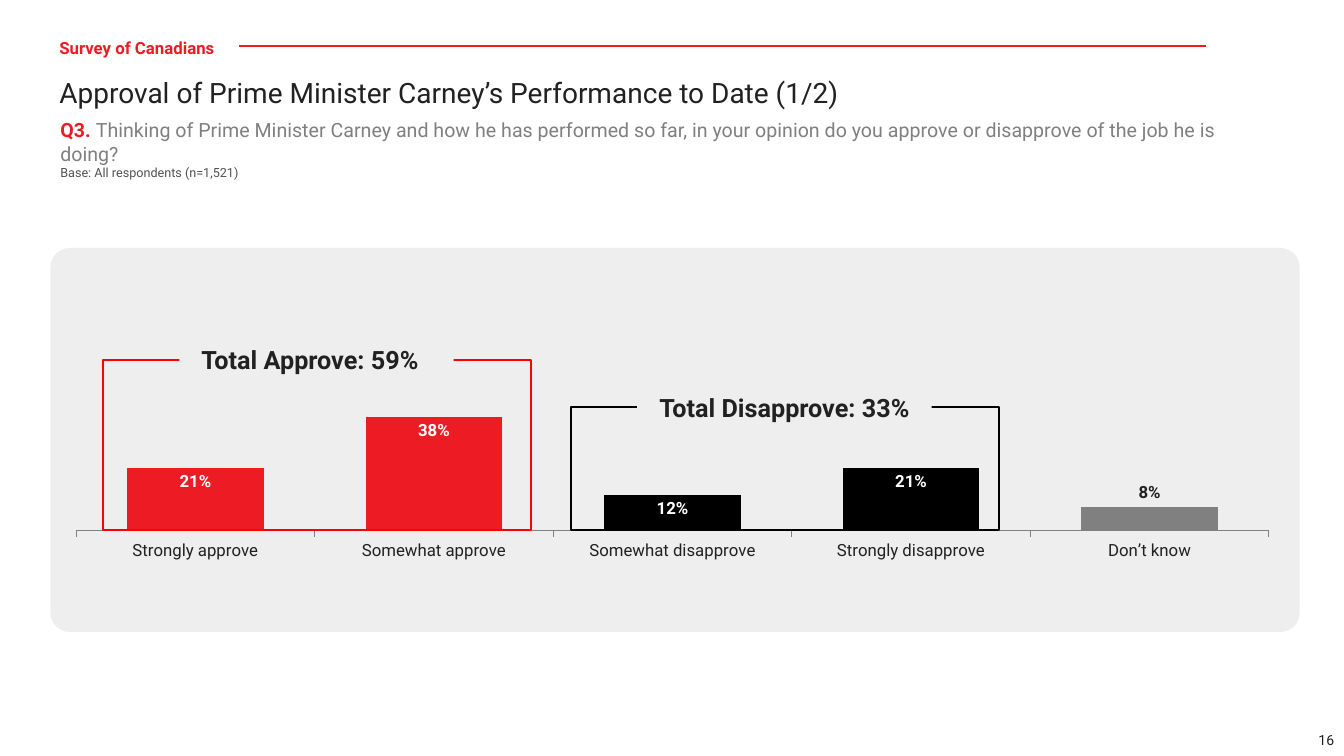
from dataclasses import dataclass

from lxml.etree import SubElement
from pptx import Presentation
from pptx.chart.data import CategoryChartData
from pptx.dml.color import RGBColor
from pptx.enum.chart import XL_CHART_TYPE, XL_LABEL_POSITION, XL_TICK_LABEL_POSITION, XL_TICK_MARK
from pptx.enum.shapes import MSO_CONNECTOR, MSO_SHAPE
from pptx.enum.text import MSO_ANCHOR, PP_ALIGN
from pptx.oxml.ns import qn
from pptx.util import Inches, Pt


@dataclass(frozen=True)
class Theme:
    font: str = "Roboto"
    red: str = "ED1C24"
    frame: str = "FF0000"
    black: str = "000000"
    ink: str = "212121"
    gray: str = "808080"
    note: str = "515156"
    panel: str = "EEEEEF"
    white: str = "FFFFFF"
    line: float = 1.5
    title: int = 20
    total: int = 18
    ask: int = 14
    body: int = 12
    page: int = 10
    base: int = 9


THEME = Theme()


def rgb(color):
    return RGBColor.from_string(color)


def style(font, size, color, bold=False):
    font.name = THEME.font
    font.size = Pt(size)
    font.bold = bold
    font.color.rgb = rgb(color)


# Plain text with one style, on an optional fill
def add_text(slide, box, text, size, color, bold=False, align=PP_ALIGN.LEFT, fill=None):
    shape = slide.shapes.add_textbox(*map(Inches, box))
    if fill:
        shape.fill.solid()
        shape.fill.fore_color.rgb = rgb(fill)
    frame = shape.text_frame
    frame.word_wrap = True
    frame.vertical_anchor = MSO_ANCHOR.MIDDLE
    para = frame.paragraphs[0]
    para.text = text
    para.alignment = align
    style(para.font, size, color, bold)
    return frame


# Filled or outlined shape
def add_box(slide, kind, box, fill=None, line=None):
    shape = slide.shapes.add_shape(kind, *map(Inches, box))
    shape.shadow.inherit = False
    if fill:
        shape.fill.solid()
        shape.fill.fore_color.rgb = rgb(fill)
    else:
        shape.fill.background()
    if line:
        shape.line.color.rgb = rgb(line)
        shape.line.width = Pt(THEME.line)
    else:
        shape.line.fill.background()
    return shape


def add_rule(slide, left, right, top):
    rule = slide.shapes.add_connector(
        MSO_CONNECTOR.STRAIGHT, Inches(left), Inches(top), Inches(right), Inches(top))
    rule.line.color.rgb = rgb(THEME.red)
    rule.line.width = Pt(THEME.line)
    SubElement(rule._element.spPr, qn("a:effectLst"))


# Question with its red number, and the base below
def add_ask(slide, box, code, text, base):
    frame = slide.shapes.add_textbox(*map(Inches, box)).text_frame
    frame.word_wrap = True
    para = frame.paragraphs[0]
    for part, color, bold in ((code, THEME.red, True), (text, THEME.gray, False)):
        run = para.add_run()
        run.text = part
        style(run.font, THEME.ask, color, bold)
    para = frame.add_paragraph()
    para.text = base
    style(para.font, THEME.base, THEME.note)


# Fix the inner plot area as shares of the chart
def set_plot(chart, left, top, width, height):
    area = chart._chartSpace.chart.plotArea
    for old in area.findall(qn("c:layout")):
        area.remove(old)
    layout = SubElement(area, qn("c:layout"))
    area.insert(0, layout)
    manual = SubElement(layout, qn("c:manualLayout"))
    items = (("layoutTarget", "inner"), ("xMode", "edge"), ("yMode", "edge"),
             ("x", left), ("y", top), ("w", width), ("h", height))
    for name, value in items:
        SubElement(manual, qn(f"c:{name}")).set("val", str(value))


def add_bars(slide, box, rows):
    data = CategoryChartData(number_format="0%")
    data.categories = [name for name, _, _ in rows]
    data.add_series("Series 1", [value for _, value, _ in rows])
    chart = slide.shapes.add_chart(
        XL_CHART_TYPE.COLUMN_CLUSTERED, *map(Inches, box), data).chart
    chart.has_legend = False
    chart.has_title = False
    style(chart.font, THEME.body, THEME.ink)
    set_plot(chart, 0, 0.012, 1, 0.668)

    # Axes
    axis = chart.value_axis
    axis.minimum_scale = 0
    axis.maximum_scale = 0.8
    axis.has_major_gridlines = False
    axis.visible = False
    axis = chart.category_axis
    axis.major_tick_mark = XL_TICK_MARK.OUTSIDE
    axis.tick_label_position = XL_TICK_LABEL_POSITION.LOW
    axis.format.line.color.rgb = rgb(THEME.gray)
    axis.format.line.width = Pt(0.75)

    # Bars and their labels
    plot = chart.plots[0]
    plot.gap_width = 75
    plot.vary_by_categories = False
    series = plot.series[0]
    series.invert_if_negative = False
    series.format.fill.solid()
    series.format.fill.fore_color.rgb = rgb(THEME.red)
    for index, (_, _, color) in enumerate(rows):
        if color != THEME.red:
            fill = series.points[index].format.fill
            fill.solid()
            fill.fore_color.rgb = rgb(color)
    labels = series.data_labels
    labels.show_value = True
    labels.number_format = "0%"
    labels.number_format_is_linked = False
    labels.position = XL_LABEL_POSITION.INSIDE_END
    style(labels.font, THEME.body, THEME.white, True)
    last = series.points[len(rows) - 1].data_label
    style(last.font, THEME.body, THEME.ink, True)
    last.position = XL_LABEL_POSITION.OUTSIDE_END


def main():
    deck = Presentation()
    deck.slide_width = Inches(13.33)
    deck.slide_height = Inches(7.5)
    slide = deck.slides.add_slide(deck.slide_layouts[6])

    # Header
    add_rule(slide, 0.9, 11.96, 0.46)
    add_text(slide, (0.49, 0.33, 1.88, 0.28), "Survey of Canadians",
             THEME.body, THEME.red, True, fill=THEME.white)
    add_text(slide, (0.49, 0.72, 11.47, 0.39),
             "Approval of Prime Minister Carney’s Performance to Date (1/2)",
             THEME.title, THEME.ink)
    add_ask(slide, (0.5, 1.12, 12.25, 0.72), "Q3. ",
            "Thinking of Prime Minister Carney and how he has performed so far, "
            "in your opinion do you approve or disapprove of the job he is doing?",
            "Base: All respondents (n=1,521)")

    # Chart on its panel
    panel = add_box(slide, MSO_SHAPE.ROUNDED_RECTANGLE, (0.5, 2.46, 12.39, 3.81), THEME.panel)
    panel.adjustments[0] = 0.05
    add_bars(slide, (0.75, 2.84, 11.84, 3.57), (
        ("Strongly approve", 0.21, THEME.red),
        ("Somewhat approve", 0.38, THEME.red),
        ("Somewhat disapprove", 0.12, THEME.black),
        ("Strongly disapprove", 0.21, THEME.black),
        ("Don’t know", 0.08, THEME.gray)))

    # Frames with totals; each label sits across the top edge
    foot = 5.26
    for left, top, color, start, width, inset, text in (
            (1.02, 3.57, THEME.frame, 1.78, 2.72, 0.23, "Total Approve: 59%"),
            (5.66, 4.04, THEME.black, 6.32, 2.92, 0.1, "Total Disapprove: 33%")):
        add_box(slide, MSO_SHAPE.RECTANGLE, (left, top, 4.25, foot - top), line=color)
        frame = add_text(slide, (start, top - 0.2, width, 0.4), text, THEME.total,
                         THEME.ink, True, PP_ALIGN.CENTER, THEME.panel)
        frame.margin_right = Inches(inset)

    # Page number
    add_text(slide, (12.09, 7.18, 1.24, 0.32), "16", THEME.page, THEME.ink,
             align=PP_ALIGN.RIGHT)
    deck.save("out.pptx")


if __name__ == "__main__":
    main()
